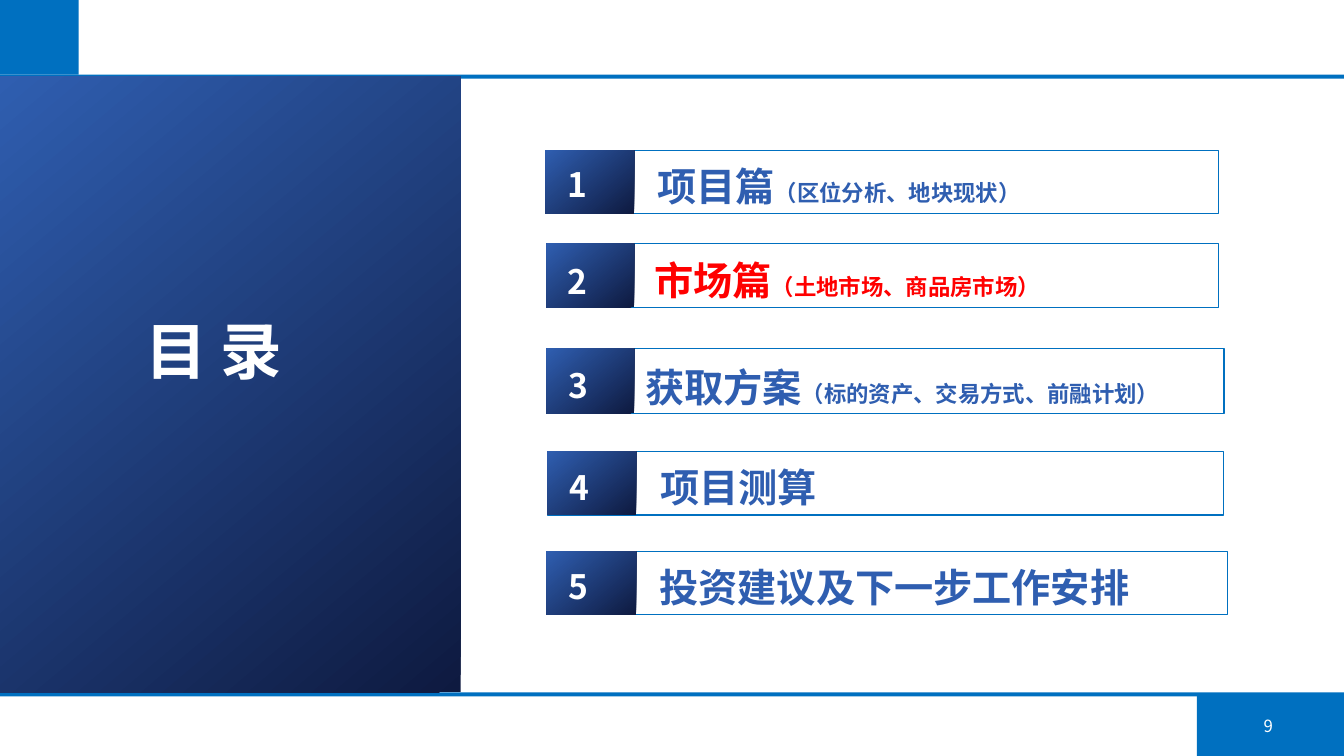
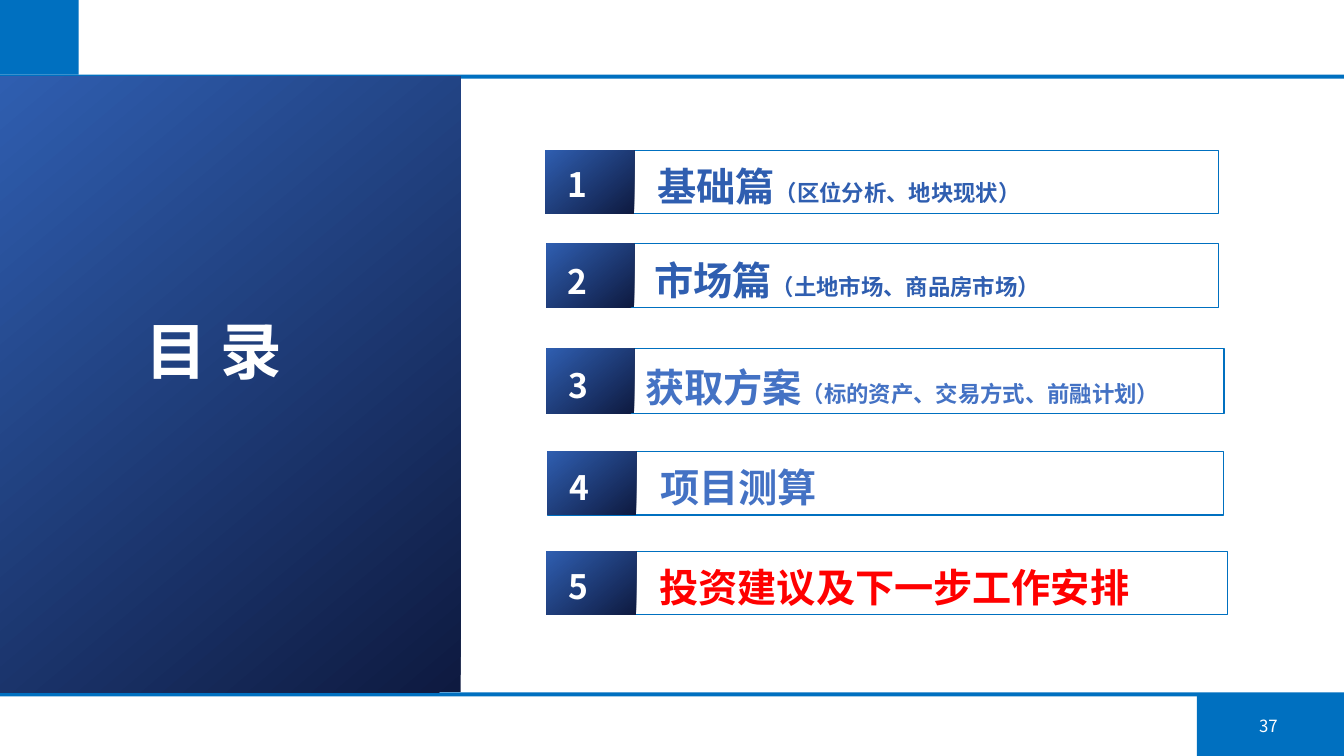
from dataclasses import dataclass

from lxml.etree import SubElement
from pptx import Presentation
from pptx.dml.color import RGBColor
from pptx.enum.shapes import MSO_SHAPE
from pptx.enum.text import MSO_ANCHOR, MSO_AUTO_SIZE, PP_ALIGN
from pptx.oxml.ns import qn
from pptx.util import Inches, Pt


@dataclass(frozen=True)
class Theme:
    font: str = "Noto Sans CJK SC"
    band: str = "0070C0"
    navy: str = "0E1A40"
    blue: str = "2F5EB0"
    soft_blue: str = "4472C4"
    red: str = "FF0000"
    white: str = "FFFFFF"
    title_size: int = 44
    heading_size: int = 28
    number_size: int = 24
    detail_size: int = 16
    page_size: int = 12
    gradient_angle: int = 130


THEME = Theme()

# Left, top, width and height of the bands every slide shares
BANDS = [
    (11.87, 6.88, 1.46, 0.62),
    (0, 0.74, 13.33, 0.04),
    (0, 6.87, 13.33, 0.04),
    (0, 0, 0.78, 0.74),
]
PANEL = (0, 0.76, 4.57, 6.11)


@dataclass(frozen=True)
class Row:
    left: float
    top: float
    width: float
    badge_width: float
    number_left: float
    number_top: float
    label_left: float
    label_top: float
    height: float = 0.63


ROWS = [
    Row(5.41, 1.49, 6.68, 0.88, 5.32, 1.58, 6.45, 1.57),
    Row(5.42, 2.42, 6.67, 0.87, 5.32, 2.54, 6.42, 2.5),
    Row(5.42, 3.46, 6.72, 0.87, 5.33, 3.57, 6.33, 3.56, 0.64),
    Row(5.43, 4.48, 6.71, 0.88, 5.34, 4.58, 6.48, 4.56),
    Row(5.42, 5.47, 6.76, 0.89, 5.33, 5.57, 6.47, 5.55),
]

# Page number, then heading, detail and colour of each chapter
AGENDAS = [
    ("9", [
        ("项目篇", "（区位分析、地块现状）", THEME.blue),
        ("市场篇", "（土地市场、商品房市场）", THEME.red),
        ("获取方案", "（标的资产、交易方式、前融计划）", THEME.blue),
        ("项目测算", "", THEME.blue),
        ("投资建议及下一步工作安排", "", THEME.blue),
    ]),
    ("37", [
        ("基础篇", "（区位分析、地块现状）", THEME.blue),
        ("市场篇", "（土地市场、商品房市场）", THEME.blue),
        ("获取方案", "（标的资产、交易方式、前融计划）", THEME.soft_blue),
        ("项目测算", "", THEME.soft_blue),
        ("投资建议及下一步工作安排", "", THEME.red),
    ]),
]


def inches(box):
    return [Inches(length) for length in box]


def add_run(paragraph, text, size, color, bold=True):
    run = paragraph.add_run()
    run.text = text
    run.font.size = Pt(size)
    run.font.bold = bold
    run.font.color.rgb = RGBColor.from_string(color)
    run.font.name = THEME.font
    SubElement(run._r.get_or_add_rPr(), qn("a:ea"), typeface=THEME.font)


def add_rectangle(slide, box):
    rectangle = slide.shapes.add_shape(MSO_SHAPE.RECTANGLE, *inches(box))
    rectangle.shadow.inherit = False
    rectangle.line.fill.background()
    return rectangle


def add_band(slide, box):
    band = add_rectangle(slide, box)
    band.fill.solid()
    band.fill.fore_color.rgb = RGBColor.from_string(THEME.band)
    return band


def add_gradient(slide, box):
    block = add_rectangle(slide, box)
    block.fill.gradient()
    block.fill.gradient_angle = THEME.gradient_angle
    for stop, color in zip(block.fill.gradient_stops, (THEME.navy, THEME.blue)):
        stop.color.rgb = RGBColor.from_string(color)
    return block


def add_frame(slide, box):
    frame = add_rectangle(slide, box)
    frame.fill.background()
    frame.line.color.rgb = RGBColor.from_string(THEME.band)
    frame.line.width = Pt(0.75)


def add_text(slide, box, runs, align=PP_ALIGN.CENTER, anchor=MSO_ANCHOR.TOP):
    text_frame = slide.shapes.add_textbox(*inches(box)).text_frame
    text_frame.word_wrap = True
    text_frame.vertical_anchor = anchor
    paragraph = text_frame.paragraphs[0]
    paragraph.alignment = align
    for run in runs:
        add_run(paragraph, *run)
    return text_frame


def move_to_layout(layout, decorations):
    """Put shared decorations behind the layout's placeholders."""
    tree = layout.shapes.element
    for position, decoration in enumerate(decorations, start=2):
        tree.insert(position, decoration.element)


def add_title(slide):
    title = slide.shapes.title
    title.left, title.top, title.width, title.height = inches((0.36, 3.05, 3.52, 0.84))
    text_frame = title.text_frame
    text_frame.auto_size = MSO_AUTO_SIZE.NONE
    text_frame.vertical_anchor = MSO_ANCHOR.TOP
    paragraph = text_frame.paragraphs[0]
    paragraph.alignment = PP_ALIGN.CENTER
    add_run(paragraph, "目 录", THEME.title_size, THEME.white)


def add_chapter(slide, row, number, heading, detail, color):
    add_frame(slide, (row.left, row.top, row.width, row.height))
    add_gradient(slide, (row.left, row.top, row.badge_width, row.height))
    add_text(slide, (row.number_left, row.number_top, 0.81, 0.5),
             [(str(number), THEME.number_size, THEME.white)])
    runs = [(heading, THEME.heading_size, color)]
    if detail:
        runs.append((detail, THEME.detail_size, color))
    label = add_text(slide, (row.label_left, row.label_top, 5.65, 0.55),
                     runs, PP_ALIGN.LEFT)
    label.margin_left = label.margin_right = Inches(0.07)
    label.margin_top = label.margin_bottom = Inches(0.04)


def add_agenda(slide, page, chapters):
    add_title(slide)
    for number, (row, chapter) in enumerate(zip(ROWS, chapters), start=1):
        add_chapter(slide, row, number, *chapter)
    add_text(slide, (12.09, 7, 0.98, 0.4),
             [(page, THEME.page_size, THEME.white, False)],
             anchor=MSO_ANCHOR.MIDDLE)


def main():
    presentation = Presentation()
    presentation.slide_width = Inches(13.33)
    presentation.slide_height = Inches(7.5)
    layout = presentation.slide_layouts[5]
    slides = [presentation.slides.add_slide(layout) for _ in AGENDAS]

    # Shared bands and title panel
    decorations = [add_band(slides[0], box) for box in BANDS]
    decorations.append(add_gradient(slides[0], PANEL))
    move_to_layout(layout, decorations)

    # Agenda slides
    for slide, (page, chapters) in zip(slides, AGENDAS):
        add_agenda(slide, page, chapters)
    presentation.save("out.pptx")


if __name__ == "__main__":
    main()
